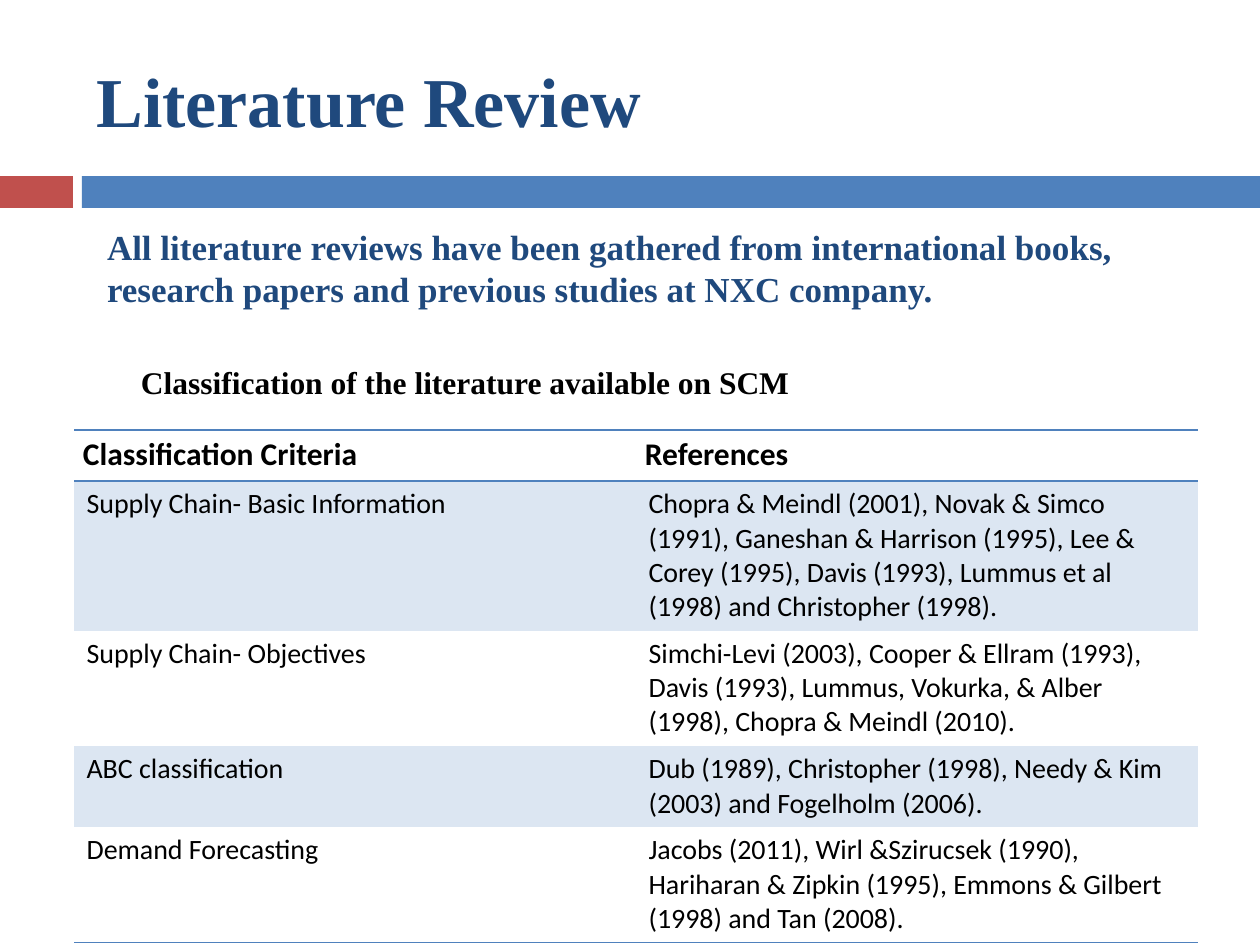
from lxml.etree import SubElement
from pptx import Presentation
from pptx.dml.color import RGBColor as RGB
from pptx.enum.shapes import MSO_SHAPE as Shape
from pptx.enum.text import MSO_ANCHOR as Anchor, MSO_AUTO_SIZE as Auto, PP_ALIGN as Align
from pptx.oxml.ns import qn
from pptx.util import Emu, Pt

PX = 914400 / 126
HUES = {"navy": "1F497D", "blue": "4F81BD", "red": "C0504D",
        "pale": "DCE6F2", "black": "000000"}
SERIF, SANS = "Times New Roman", "Calibri"
PLAIN = "{2D5ABB26-0587-4C30-8999-92F81FD0307C}"
ROWS = [
    ("Classification Criteria", "References"),
    ("Supply Chain- Basic Information",
     "Chopra & Meindl (2001), Novak & Simco (1991), Ganeshan & Harrison (1995), "
     "Lee & Corey (1995), Davis (1993), Lummus et al (1998) and Christopher (1998)."),
    ("Supply Chain- Objectives",
     "Simchi-Levi (2003), Cooper & Ellram (1993), Davis (1993), Lummus, Vokurka, "
     "& Alber (1998), Chopra & Meindl (2010)."),
    ("ABC classification",
     "Dub (1989), Christopher (1998), Needy & Kim (2003) and Fogelholm (2006)."),
    ("Demand Forecasting",
     "Jacobs (2011), Wirl &Szirucsek (1990), Hariharan & Zipkin (1995), "
     "Emmons & Gilbert (1998) and Tan (2008)."),
]
HIGHS = [51, 149, 115, 81, 115]


def px(*nums):
    return [Emu(round(n * PX)) for n in nums]


def hue(name):
    return RGB.from_string(HUES[name])


def write(frame, text, size, font=SERIF, color="black", bold=True, space=None):
    para = frame.paragraphs[0]
    para.alignment = Align.LEFT
    para.line_spacing = space
    run = para.add_run()
    run.text = text
    run.font.size, run.font.name, run.font.bold = Pt(size), font, bold
    run.font.color.rgb = hue(color)


def add_bar(slide, box, color):
    bar = slide.shapes.add_shape(Shape.RECTANGLE, *px(*box))
    bar.shadow.inherit = False
    bar.fill.solid()
    bar.fill.fore_color.rgb = hue(color)
    bar.line.fill.background()


def add_title(slide, box, text):
    title = slide.shapes.title
    title.left, title.top, title.width, title.height = px(*box)
    title.text_frame.vertical_anchor = Anchor.MIDDLE
    write(title.text_frame, text, 40, color="navy")


def add_text(slide, box, text, size, wrap=True, inset=13, **style):
    frame = slide.shapes.add_textbox(*px(*box)).text_frame
    frame.word_wrap = wrap
    frame.auto_size = Auto.SHAPE_TO_FIT_TEXT
    frame.margin_left = px(inset)[0]
    write(frame, text, size, **style)


def add_edges(cell, sides):
    """Rule the given sides; edges must come before the fill in the cell XML."""
    props = cell._tc.get_or_add_tcPr()
    for i, side in enumerate(sides):
        line = props.makeelement(qn("a:ln" + side), {"w": str(Pt(1))})
        fill = SubElement(line, qn("a:solidFill"))
        SubElement(fill, qn("a:srgbClr"), val=HUES["blue"])
        props.insert(i, line)


def fill_cell(cell, text, row):
    if row == 0:
        cell.margin_left = cell.margin_right = px(9)[0]
        cell.margin_top = cell.margin_bottom = 0
        write(cell.text_frame, text, 18, font=SANS, space=1.15)
    else:
        write(cell.text_frame, text, 16, font=SANS, bold=False)
    if row % 2:
        cell.fill.solid()
        cell.fill.fore_color.rgb = hue("pale")
    else:
        cell.fill.background()
    add_edges(cell, {0: "TB", len(ROWS) - 1: "B"}.get(row, ""))


def add_grid(slide, left, top, width):
    box = px(left, top, width, sum(HIGHS))
    grid = slide.shapes.add_table(len(ROWS), len(ROWS[0]), *box).table
    grid.first_row = grid.horz_banding = False
    grid._tbl.tblPr.find(qn("a:tableStyleId")).text = PLAIN
    for r, (texts, high) in enumerate(zip(ROWS, HIGHS)):
        grid.rows[r].height = px(high)[0]
        for c, text in enumerate(texts):
            fill_cell(grid.cell(r, c), text, r)


def main():
    deck = Presentation()
    deck.slide_width, deck.slide_height = px(1260, 945)
    slide = deck.slides.add_slide(deck.slide_layouts[5])
    add_bar(slide, (0, 176, 73, 32), "red")
    add_bar(slide, (82, 176, 1178, 32), "blue")
    add_title(slide, (84, 32, 1124, 136), "Literature Review")
    add_grid(slide, 74, 430, 1124)
    add_text(slide, (128, 357, 680, 51),
             "Classification of the literature available on SCM", 18, wrap=False)
    add_text(slide, (-32, 219, 1218, 97),
             "All literature reviews have been gathered from international books, "
             "research papers and previous studies at NXC company.",
             20, inset=139, color="navy")
    deck.save("out.pptx")


if __name__ == "__main__":
    main()
